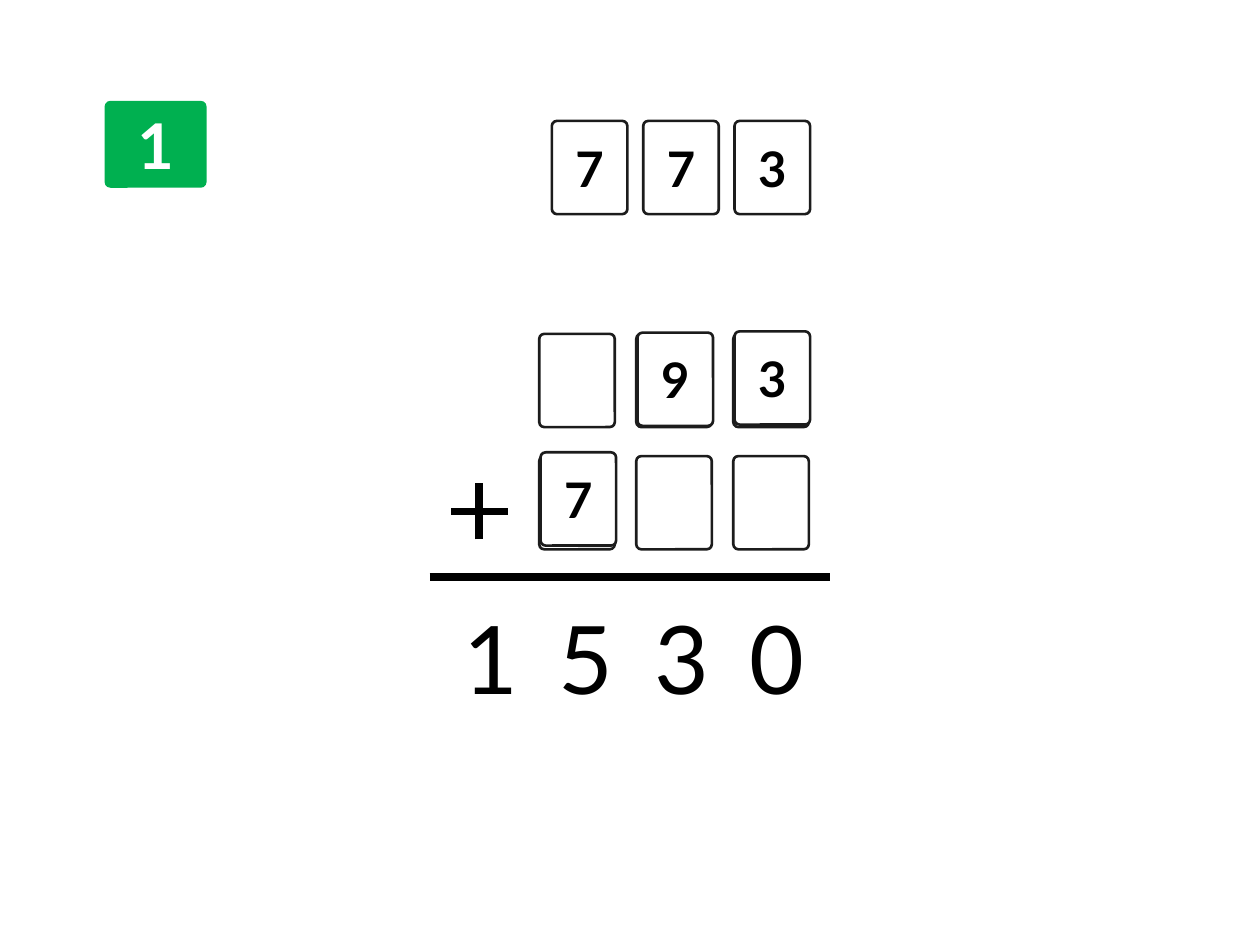
"""Build a number-tile addition puzzle slide."""
from lxml import etree
from pptx import Presentation
from pptx.dml.color import RGBColor
from pptx.enum.shapes import MSO_CONNECTOR, MSO_SHAPE
from pptx.enum.text import MSO_ANCHOR, MSO_AUTO_SIZE, PP_ALIGN
from pptx.oxml.ns import qn
from pptx.util import Inches, Pt

ROUNDED = MSO_SHAPE.ROUNDED_RECTANGLE
STRAIGHT = MSO_CONNECTOR.STRAIGHT
MIDDLE, CENTER = MSO_ANCHOR.MIDDLE, PP_ALIGN.CENTER
FIT_SHAPE = MSO_AUTO_SIZE.SHAPE_TO_FIT_TEXT

THEME = {
    "white": "FFFFFF", "green": "00B050", "black": "000000", "edge": "1C1C1C",
    "badge": {"size": Pt(36), "bold": True, "name": "Lato"},
    "tile": {"size": Pt(28), "bold": True, "name": "Lato"},
    "sum": {"size": Pt(54), "name": "Lato"},
}
PANEL = (0.5, 0.48, 8.99, 6.52)
BADGE = ("1", (0.83, 0.8, 0.81, 0.69))
TILE_W, TILE_H = 0.6, 0.74
GRID_LEFT, COL_STEP, ROWS = 4.28, 0.77, (2.65, 3.62)
PLACED = [("7", 0, 4.29, 3.59), ("9", 1, 4.29, 2.64), ("3", 2, 4.29, 2.63)]
SPARE, SPARE_LEFT, SPARE_TOP, SPARE_STEP = "773", 4.38, 0.96, 0.725
TOTAL, TOTAL_LEFT, TOTAL_TOP, TOTAL_STEP = "1530", 3.58, 4.71, 0.757
RULES = [
    (3.41, 4.58, 6.59, 4.58),
    (3.8, 4.28, 3.8, 3.83),
    (3.58, 4.06, 4.03, 4.06),
]


def color(name):
    return RGBColor.from_string(THEME[name])


def write(tf, text, style, ink):
    tf.word_wrap = True
    p = tf.paragraphs[0]
    p.alignment = CENTER
    r = p.add_run()
    r.text = text
    for key, value in THEME[style].items():
        setattr(r.font, key, value)
    r.font.color.rgb = color(ink)
    return r


def add_card(s, box, fill, edge=None, width=1.5, corner=0.067):
    sp = s.shapes.add_shape(ROUNDED, *map(Inches, box))
    sp.adjustments[0] = corner
    sp.shadow.inherit = False
    sp.fill.solid()
    sp.fill.fore_color.rgb = color(fill)
    if edge:
        sp.line.color.rgb = color(edge)
        sp.line.width = Pt(width)
    else:
        sp.line.fill.background()
    sp.text_frame.vertical_anchor = MIDDLE
    return sp


def add_tile(s, left, top, digit=None):
    sp = add_card(s, (left, top, TILE_W, TILE_H), "white", "edge")
    if digit:
        write(sp.text_frame, digit, "tile", "black")


def add_rule(s, ends):
    line = s.shapes.add_connector(STRAIGHT, *map(Inches, ends))
    line.line.color.rgb = color("black")
    line.line.width = Pt(4.5)
    etree.SubElement(line._element.spPr, qn("a:effectLst"))


def add_total_digit(s, left, digit):
    box = s.shapes.add_textbox(*map(Inches, (left, TOTAL_TOP, 0.55, 1.01)))
    r = write(box.text_frame, digit, "sum", "black")
    r.font._element.set("spc", "300")
    box.text_frame.auto_size = FIT_SHAPE


def main():
    prs = Presentation()
    prs.slide_width, prs.slide_height = Inches(10), Inches(7.5)
    s = prs.slides.add_slide(prs.slide_layouts[6])

    panel = add_card(s, PANEL, "white", "white", 2, 0.026)
    rgb = panel._element.spPr.find(qn("a:solidFill"))[0]
    etree.SubElement(rgb, qn("a:alpha"), val="85000")

    number, box = BADGE
    badge = add_card(s, box, "green")
    write(badge.text_frame, number, "badge", "white")

    for ends in RULES:
        add_rule(s, ends)
    for i, digit in enumerate(TOTAL):
        add_total_digit(s, TOTAL_LEFT + i * TOTAL_STEP, digit)
    for top in ROWS:
        for col in range(3):
            add_tile(s, GRID_LEFT + col * COL_STEP, top)
    for digit, col, left, top in PLACED:
        add_tile(s, left + col * COL_STEP, top, digit)
    for i, digit in enumerate(SPARE):
        add_tile(s, SPARE_LEFT + i * SPARE_STEP, SPARE_TOP, digit)

    prs.save("out.pptx")


if __name__ == "__main__":
    main()
